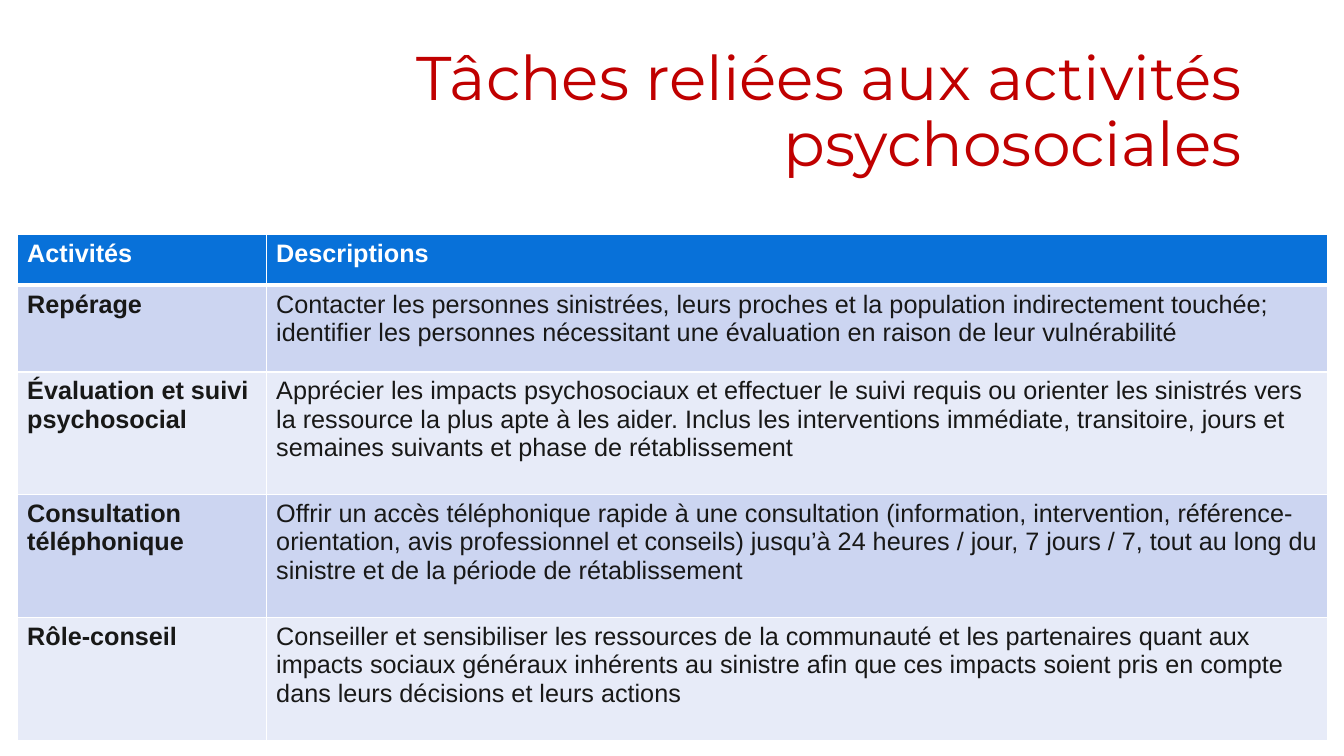
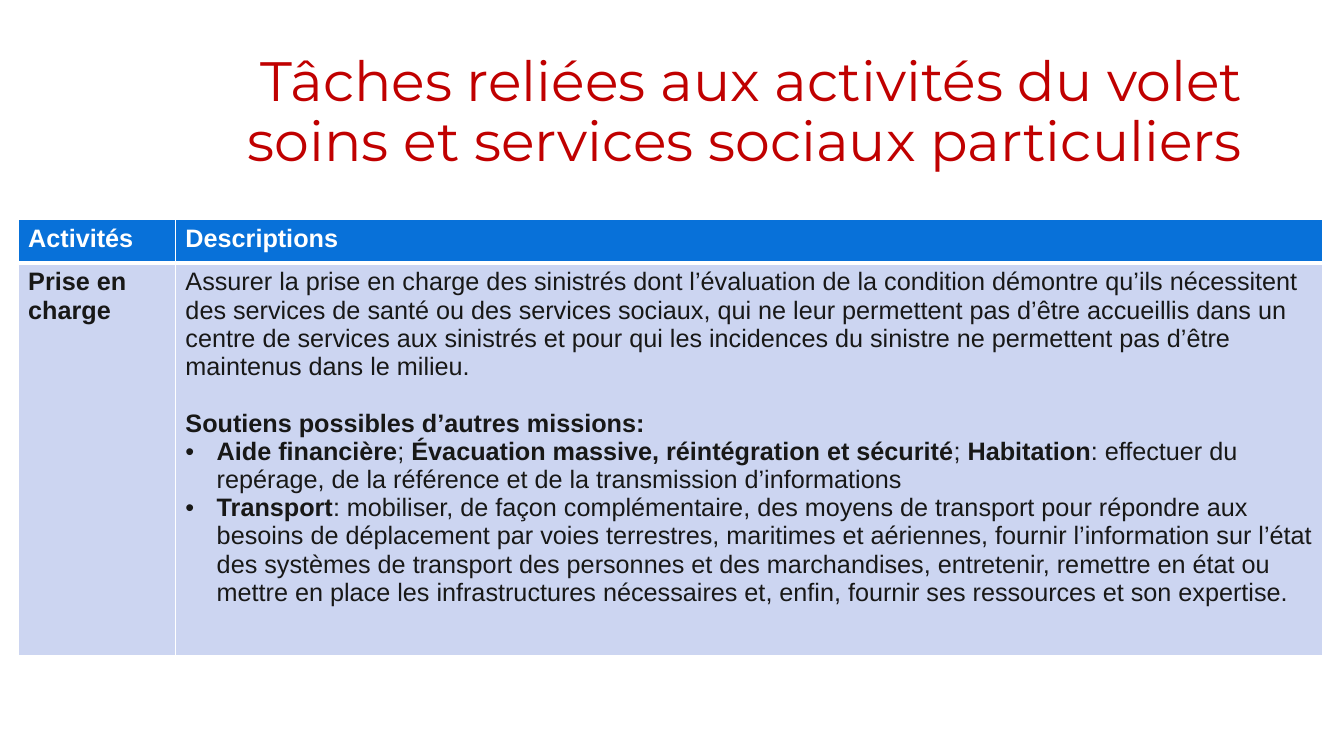
from lxml.etree import SubElement
from pptx import Presentation
from pptx.dml.color import RGBColor
from pptx.enum.text import MSO_ANCHOR, MSO_AUTO_SIZE, PP_ALIGN
from pptx.oxml import parse_xml
from pptx.oxml.ns import nsdecls, qn
from pptx.util import Inches, Pt

HUES = {"title": "C00000", "head": "0871D9", "odd": "CCD5F1",
        "even": "E7EBF8", "text": "181817", "white": "FFFFFF"}
FONTS = {"title": "Montserrat", "table": "Arial"}
SIZE = 18
GAP = 20.2  # one line of space, in points
HEAD = ("Activités", "Descriptions")

# Content: a description is a list of (style, runs); a run is (text, bold)
DECK = [
    {"title": "Tâches reliées aux activités psychosociales", "size": 44,
     "at": (0.17, 2.33), "cols": (2.47, 10.53),
     "rows": (0.5, 0.86, 1.22, 1.22, 1.22),
     "tasks": [
         ("Repérage", [("plain", [("Contacter les personnes sinistrées, leurs proches et la population indirectement touchée; identifier les personnes nécessitant une évaluation en raison de leur vulnérabilité", False)])]),
         ("Évaluation et suivi psychosocial", [("plain", [("Apprécier les impacts psychosociaux et effectuer le suivi requis ou orienter les sinistrés vers la ressource la plus apte à les aider. Inclus les interventions immédiate, transitoire, jours et semaines suivants et phase de rétablissement", False)])]),
         ("Consultation téléphonique", [("plain", [("Offrir un accès téléphonique rapide à une consultation (information, intervention, référence-orientation, avis professionnel et conseils) jusqu’à 24 heures / jour, 7 jours / 7, tout au long du sinistre et de la période de rétablissement", False)])]),
         ("Rôle-conseil", [("plain", [("Conseiller et sensibiliser les ressources de la communauté et les partenaires quant aux impacts sociaux généraux inhérents au sinistre afin que ces impacts soient pris en compte dans leurs décisions et leurs actions", False)])]),
     ]},
    {"title": "Tâches reliées aux activités du volet soins et services sociaux particuliers", "size": 39.6,
     "at": (0.18, 2.18), "cols": (1.56, 11.38), "rows": (0.43, 3.89),
     "tasks": [
         ("Prise en charge", [
             ("plain", [("Assurer la prise en charge des sinistrés dont l’évaluation de la condition démontre qu’ils nécessitent des services de santé ou des services sociaux, qui ne leur permettent pas d’être accueillis dans un centre de services aux sinistrés et pour qui les incidences du sinistre ne permettent pas d’être maintenus dans le milieu.", False)]),
             ("spaced", [("Soutiens possibles d’autres missions:", True)]),
             ("bullet", [("Aide financière", True), ("; ", False),
                         ("Évacuation massive, réintégration et sécurité", True), ("; ", False),
                         ("Habitation", True),
                         (": effectuer du repérage, de la référence et de la transmission d’informations", False)]),
             ("bullet", [("Transport", True),
                         (": mobiliser, de façon complémentaire, des moyens de transport pour répondre aux besoins de déplacement par voies terrestres, maritimes et aériennes, fournir l’information sur l’état des systèmes de transport des personnes et des marchandises, entretenir, remettre en état ou mettre en place les infrastructures nécessaires et, enfin, fournir ses ressources et son expertise.", False)]),
         ]),
     ]},
]


def add_run(para, text, font, size, hue, bold=False):
    run = para.add_run()
    run.text = text
    run.font.name = font
    run.font.size = Pt(size)
    run.font.bold = bold
    run.font.color.rgb = RGBColor.from_string(HUES[hue])


def add_title(slide, text, size):
    title = slide.shapes.title
    title.left, title.top = Inches(1.94), Inches(0.4)
    title.width, title.height = Inches(10.48), Inches(1.45)
    frame = title.text_frame
    frame.word_wrap = True
    frame.auto_size = MSO_AUTO_SIZE.NONE
    frame.vertical_anchor = MSO_ANCHOR.MIDDLE
    para = frame.paragraphs[0]
    para.alignment = PP_ALIGN.RIGHT
    para.line_spacing = 0.9
    add_run(para, text, FONTS["title"], size, "title")


def add_bullet(para):
    props = para._p.get_or_add_pPr()
    props.set("marL", str(Inches(0.31)))
    props.set("indent", str(-Inches(0.31)))
    SubElement(props, qn("a:buFont")).set("typeface", FONTS["table"])
    SubElement(props, qn("a:buChar")).set("char", "•")


def set_edges(cell, row):
    # The rule under the header is thicker than the others
    widths = {"L": 1, "R": 1, "T": 3 if row == 1 else 1, "B": 3 if row == 0 else 1}
    props = cell._tc.get_or_add_tcPr()
    for spot, (side, width) in enumerate(widths.items()):
        props.insert(spot, parse_xml(
            f'<a:ln{side} {nsdecls("a")} w="{Pt(width)}"><a:solidFill>'
            f'<a:srgbClr val="{HUES["white"]}"/></a:solidFill></a:ln{side}>'))


def fill_cell(cell, row, paras):
    band = "head" if row == 0 else "odd" if row % 2 else "even"
    cell.fill.solid()
    cell.fill.fore_color.rgb = RGBColor.from_string(HUES[band])
    set_edges(cell, row)
    frame = cell.text_frame
    for spot, (style, runs) in enumerate(paras):
        para = frame.add_paragraph() if spot else frame.paragraphs[0]
        if style == "bullet":
            add_bullet(para)
        elif style == "spaced":
            para.space_before = Pt(GAP)
        for text, bold in runs:
            add_run(para, text, FONTS["table"], SIZE, "text" if row else "white", bold)


def add_grid(slide, page):
    cols, rows = page["cols"], page["rows"]
    left, top = page["at"]
    grid = slide.shapes.add_table(len(rows), len(cols), Inches(left), Inches(top),
                                  Inches(sum(cols)), Inches(sum(rows))).table
    for col, width in zip(grid.columns, cols):
        col.width = Inches(width)
    for line, height in zip(grid.rows, rows):
        line.height = Inches(height)
    lines = [(HEAD[0], [("plain", [(HEAD[1], True)])])] + page["tasks"]
    for row, (name, paras) in enumerate(lines):
        fill_cell(grid.cell(row, 0), row, [("plain", [(name, True)])])
        fill_cell(grid.cell(row, 1), row, paras)


def main():
    deck = Presentation()
    deck.slide_width, deck.slide_height = Inches(13.33), Inches(7.5)
    for page in DECK:
        slide = deck.slides.add_slide(deck.slide_layouts[5])
        add_title(slide, page["title"], page["size"])
        add_grid(slide, page)
    deck.save("out.pptx")


if __name__ == "__main__":
    main()
